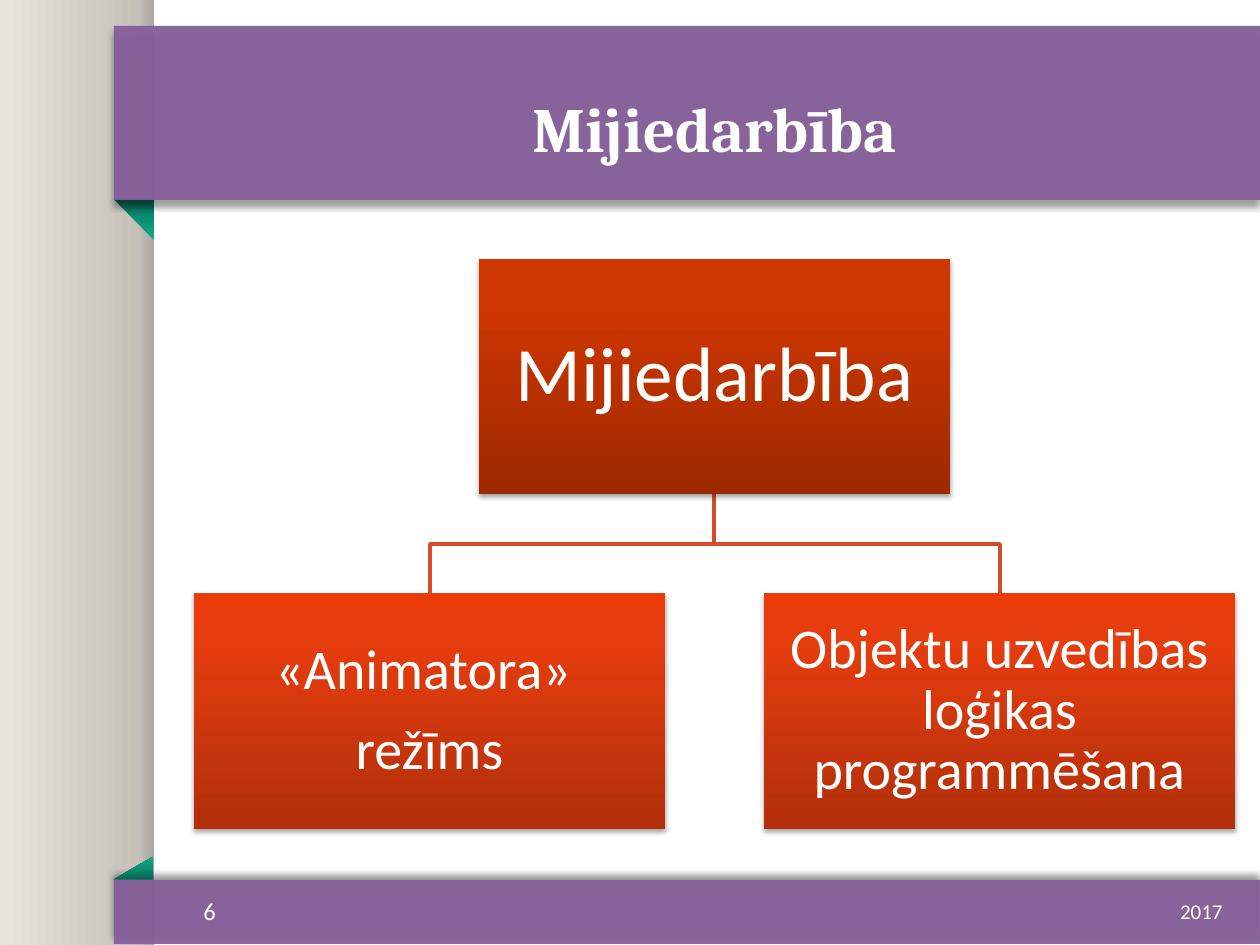
from collections import namedtuple
from dataclasses import dataclass

from lxml import etree
from pptx import Presentation
from pptx.dml.color import RGBColor
from pptx.enum.shapes import MSO_SHAPE
from pptx.enum.text import MSO_ANCHOR, MSO_AUTO_SIZE, PP_ALIGN
from pptx.oxml.ns import qn
from pptx.util import Emu, Pt

RECT, FOLD = MSO_SHAPE.RECTANGLE, MSO_SHAPE.RIGHT_TRIANGLE
LEFT, CENTER, RIGHT = PP_ALIGN.LEFT, PP_ALIGN.CENTER, PP_ALIGN.RIGHT
TOP, MIDDLE = MSO_ANCHOR.TOP, MSO_ANCHOR.MIDDLE
NO_AUTOFIT = MSO_AUTO_SIZE.NONE
EMU_PER_PX = 914400 / 126
TITLE_ONLY = 5

Box = namedtuple("Box", "left top width height")
Shadow = namedtuple("Shadow", "opacity blur distance angle")


@dataclass(frozen=True)
class Theme:
    heading_font: str = "Cambria"
    body_font: str = "Calibri"
    text: str = "FFFFFF"
    band: str = "875F9A"
    band_opacity: int = 95
    branch: str = "D44D28"
    branch_width: int = 2
    side: tuple = ((0, "A6A6A6"), (10, "C5C1B9"), (100, "EAE5DB"))
    fold: tuple = ((0, "076553"), (50, "0A9075"), (100, "0CAA8B"))
    root: tuple = ((0, "9E2900"), (80, "CE3600"), (100, "CF3600"))
    child: tuple = ((0, "B12F0A"), (80, "E63D0E"), (100, "EB3B09"))
    title_size: int = 36
    root_size: int = 44
    child_size: int = 32
    number_size: int = 14
    year_size: int = 12


THEME = Theme()


def px(length):
    return Emu(round(length * EMU_PER_PX))


def add_preset(slide, preset, box):
    shape = slide.shapes.add_shape(preset, *map(px, box))
    shape.shadow.inherit = False
    shape.line.fill.background()
    return shape


def fill_gradient(shape, stops, angle):
    shape.fill.gradient()
    gradient = shape.element.spPr.find(qn("a:gradFill"))
    for part in list(gradient):
        gradient.remove(part)
    gradient.set("rotWithShape", "1")
    stop_list = etree.SubElement(gradient, qn("a:gsLst"))
    for position, color in stops:
        stop = etree.SubElement(stop_list, qn("a:gs"), pos=str(position * 1000))
        etree.SubElement(stop, qn("a:srgbClr"), val=color)
    etree.SubElement(gradient, qn("a:lin"), ang=str(angle * 60000), scaled="0")


def cast_shadow(shape, shadow):
    effects = shape.element.spPr.find(qn("a:effectLst"))
    outer = etree.SubElement(
        effects, qn("a:outerShdw"), blurRad=str(Pt(shadow.blur)),
        dist=str(Pt(shadow.distance)), dir=str(shadow.angle * 60000), rotWithShape="0")
    color = etree.SubElement(outer, qn("a:srgbClr"), val="000000")
    etree.SubElement(color, qn("a:alpha"), val=str(shadow.opacity * 1000))


def write(frame, lines, size, font, align, anchor=MIDDLE, bold=False):
    frame.word_wrap = True
    frame.auto_size = NO_AUTOFIT
    frame.vertical_anchor = anchor
    frame.text = "\n".join(lines)
    for paragraph in frame.paragraphs:
        paragraph.alignment = align
        paragraph.font.name = font
        paragraph.font.size = Pt(size)
        paragraph.font.bold = bold
        paragraph.font.color.rgb = RGBColor.from_string(THEME.text)


def add_side(slide, box):
    fill_gradient(add_preset(slide, RECT, box), THEME.side, 180)


def add_band(slide, box, shadow_angle):
    band = add_preset(slide, RECT, box)
    band.fill.solid()
    band.fill.fore_color.rgb = RGBColor.from_string(THEME.band)
    color = band.element.spPr.find(qn("a:solidFill")).find(qn("a:srgbClr"))
    etree.SubElement(color, qn("a:alpha"), val=str(THEME.band_opacity * 1000))
    cast_shadow(band, Shadow(40, 4, 3, shadow_angle))


def add_fold(slide, box, mirrored=False):
    fold = add_preset(slide, FOLD, box)
    fold.rotation = 270
    if mirrored:
        fold.element.spPr.find(qn("a:xfrm")).set("flipH", "1")
    fill_gradient(fold, THEME.fold, 0)


def add_header(slide, box, title_text):
    add_fold(slide, Box(box.left, box.top + box.height - 1, 40, 40), mirrored=True)
    add_band(slide, box, 90)
    title = slide.shapes.title
    title.element.getparent().append(title.element)
    title.left, title.top, title.width, title.height = map(
        px, (box.left + 80, box.top + 19, box.width - 105, 126))
    write(title.text_frame, [title_text], THEME.title_size, THEME.heading_font,
          CENTER, TOP, bold=True)
    heading = title.text_frame.paragraphs[0]
    heading.line_spacing = 1.5
    heading.space_before = Pt(THEME.title_size * 0.2)


def add_footer(slide, box, number, year):
    add_band(slide, box, 270)
    add_fold(slide, Box(box.left + 8, box.top - 32, 23, 40))
    label_width = 294
    labels = (
        (box.left + 77, number, THEME.number_size, LEFT),
        (box.left + box.width - 25 - label_width, year, THEME.year_size, RIGHT),
    )
    for left, label, size, align in labels:
        holder = slide.shapes.add_textbox(*map(px, (left, box.top + 6, label_width, 50)))
        write(holder.text_frame, [label], size, THEME.body_font, align)


def add_node(slide, box, lines, size, stops, inset):
    node = add_preset(slide, RECT, box)
    fill_gradient(node, stops, 270)
    cast_shadow(node, Shadow(35, 3.1, 1.8, 90))
    frame = node.text_frame
    frame.margin_left = frame.margin_right = px(inset)
    frame.margin_top = frame.margin_bottom = px(inset)
    write(frame, lines, size, THEME.body_font, CENTER)
    for paragraph in frame.paragraphs:
        paragraph.line_spacing = 0.9
        paragraph.space_after = Pt(round(size * 0.35))


def add_branch(slide, start, end):
    middle = (start[1] + end[1]) / 2
    outline = slide.shapes.build_freeform(*start, scale=EMU_PER_PX)
    outline.add_line_segments([(start[0], middle), (end[0], middle), end], close=False)
    branch = outline.convert_to_shape()
    branch.shadow.inherit = False
    branch.fill.background()
    branch.line.color.rgb = RGBColor.from_string(THEME.branch)
    branch.line.width = Pt(THEME.branch_width)


def add_hierarchy(slide, box, root_lines, children):
    gap = 99
    node_width = (box.width - gap * (len(children) - 1)) / len(children)
    node_height = (box.height - gap) / 2
    center = box.left + box.width / 2
    child_top = box.top + node_height + gap
    child_boxes = [
        Box(box.left + index * (node_width + gap), child_top, node_width, node_height)
        for index in range(len(children))
    ]
    for child in child_boxes:
        add_branch(slide, (center, box.top + node_height),
                   (child.left + node_width / 2, child_top))
    root = Box(center - node_width / 2, box.top, node_width, node_height)
    add_node(slide, root, root_lines, THEME.root_size, THEME.root, 4)
    for child, lines in zip(child_boxes, children):
        add_node(slide, child, lines, THEME.child_size, THEME.child, 3)


def main():
    deck = Presentation()
    deck.slide_width, deck.slide_height = px(1260), px(945)
    slide = deck.slides.add_slide(deck.slide_layouts[TITLE_ONLY])
    add_side(slide, Box(0, 0, 154, 945))
    add_header(slide, Box(114, 26, 1146, 174), "Mijiedarbība")
    add_hierarchy(
        slide, Box(194, 259, 1041, 570), ["Mijiedarbība"],
        [["«Animatora» ", "režīms"], ["Objektu uzvedības loģikas programmēšana"]])
    add_footer(slide, Box(114, 880, 1146, 64), "6", "2017")
    deck.save("out.pptx")


if __name__ == "__main__":
    main()
